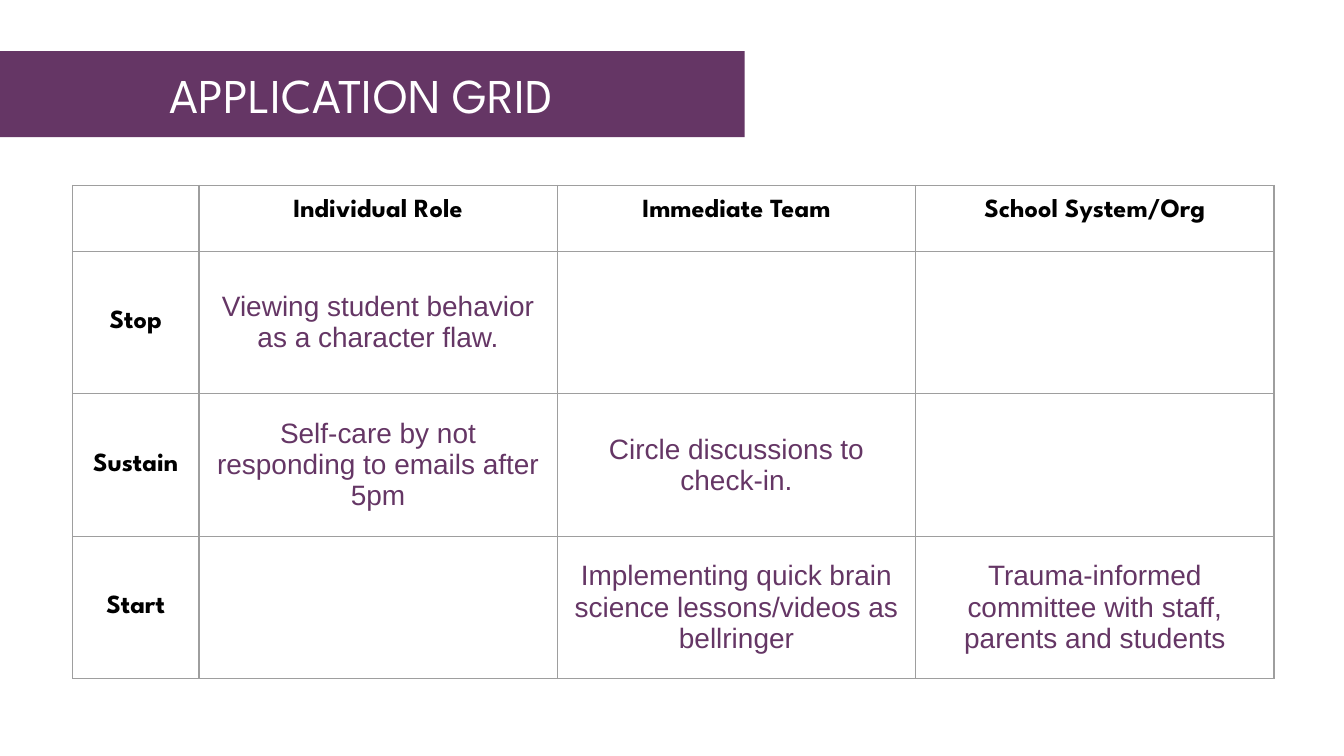
from pptx import Presentation
from pptx.dml.color import RGBColor
from pptx.enum.text import MSO_ANCHOR, MSO_AUTO_SIZE, PP_ALIGN
from pptx.oxml import parse_xml
from pptx.oxml.ns import nsdecls
from pptx.util import Inches, Pt

COLORS = {"purple": "653665", "white": "FFFFFF", "black": "000000", "grid": "9E9E9E"}
HEADING_FONT, BODY_FONT = "League Spartan", "Arial"

SLIDE_WIDTH = 10
SLIDE_HEIGHT = SLIDE_WIDTH * 9 / 16
COLUMN_WIDTHS = [0.94] + [8 / 3] * 3
ROW_HEIGHTS = [0.49] + [1.06] * 3
GRID_TEXT = [
    ["", "Individual Role", "Immediate Team", "School System/Org"],
    ["Stop", "Viewing student behavior as a character flaw.", "", ""],
    ["Sustain", "Self-care by not responding to emails after 5pm",
     "Circle discussions to check-in.", ""],
    ["Start", "", "Implementing quick brain science lessons/videos as bellringer",
     "Trauma-informed committee with staff, parents and students"],
]


def color(name):
    return RGBColor.from_string(COLORS[name])


def format_paragraph(paragraph, font_name, size, color_name, bold=False):
    paragraph.alignment = PP_ALIGN.CENTER
    font = paragraph.font
    font.name, font.size, font.bold = font_name, Pt(size), bold
    font.color.rgb = color(color_name)


def set_margins(target, margin):
    target.margin_left = target.margin_right = Inches(margin)
    target.margin_top = target.margin_bottom = Inches(margin)


def add_banner_title(slide, text):
    title = slide.shapes.title
    title.left, title.top = Inches(-0.16), Inches(0.38)
    title.width, title.height = Inches(5.7), Inches(0.64)
    title.fill.solid()
    title.fill.fore_color.rgb = color("purple")
    frame = title.text_frame
    frame.text = text
    frame.auto_size = MSO_AUTO_SIZE.NONE
    frame.vertical_anchor = MSO_ANCHOR.MIDDLE
    set_margins(frame, 0)
    format_paragraph(frame.paragraphs[0], HEADING_FONT, 26, "white")


def add_borders(cell):
    """Draw all four cell edges; they must precede the fill in the XML."""
    properties = cell._tc.get_or_add_tcPr()
    for position, edge in enumerate(("lnL", "lnR", "lnT", "lnB")):
        properties.insert(position, parse_xml(
            f'<a:{edge} {nsdecls("a")} w="{Pt(0.75)}"><a:solidFill>'
            f'<a:srgbClr val="{COLORS["grid"]}"/></a:solidFill></a:{edge}>'))


def format_cell(cell, text, is_heading, anchor):
    cell.text = text
    cell.vertical_anchor = anchor
    set_margins(cell, 0.1)
    cell.fill.solid()
    cell.fill.fore_color.rgb = color("white")
    add_borders(cell)
    paragraph = cell.text_frame.paragraphs[0]
    if is_heading:
        format_paragraph(paragraph, HEADING_FONT, 14, "black", bold=True)
    else:
        format_paragraph(paragraph, BODY_FONT, 15, "purple")


def add_application_table(slide):
    table = slide.shapes.add_table(
        len(ROW_HEIGHTS), len(COLUMN_WIDTHS), Inches(0.54), Inches(1.38),
        Inches(sum(COLUMN_WIDTHS)), Inches(sum(ROW_HEIGHTS))).table
    table.first_row = table.horz_banding = False
    for column, width in zip(table.columns, COLUMN_WIDTHS):
        column.width = Inches(width)
    for row, height in zip(table.rows, ROW_HEIGHTS):
        row.height = Inches(height)
    for row_index, texts in enumerate(GRID_TEXT):
        anchor = MSO_ANCHOR.MIDDLE if row_index else MSO_ANCHOR.TOP
        for column_index, text in enumerate(texts):
            is_heading = row_index == 0 or column_index == 0
            format_cell(table.cell(row_index, column_index), text, is_heading, anchor)


def main():
    presentation = Presentation()
    presentation.slide_width = Inches(SLIDE_WIDTH)
    presentation.slide_height = Inches(SLIDE_HEIGHT)
    slide = presentation.slides.add_slide(presentation.slide_layouts[5])
    add_application_table(slide)
    add_banner_title(slide, "APPLICATION GRID")
    presentation.save("out.pptx")


if __name__ == "__main__":
    main()
